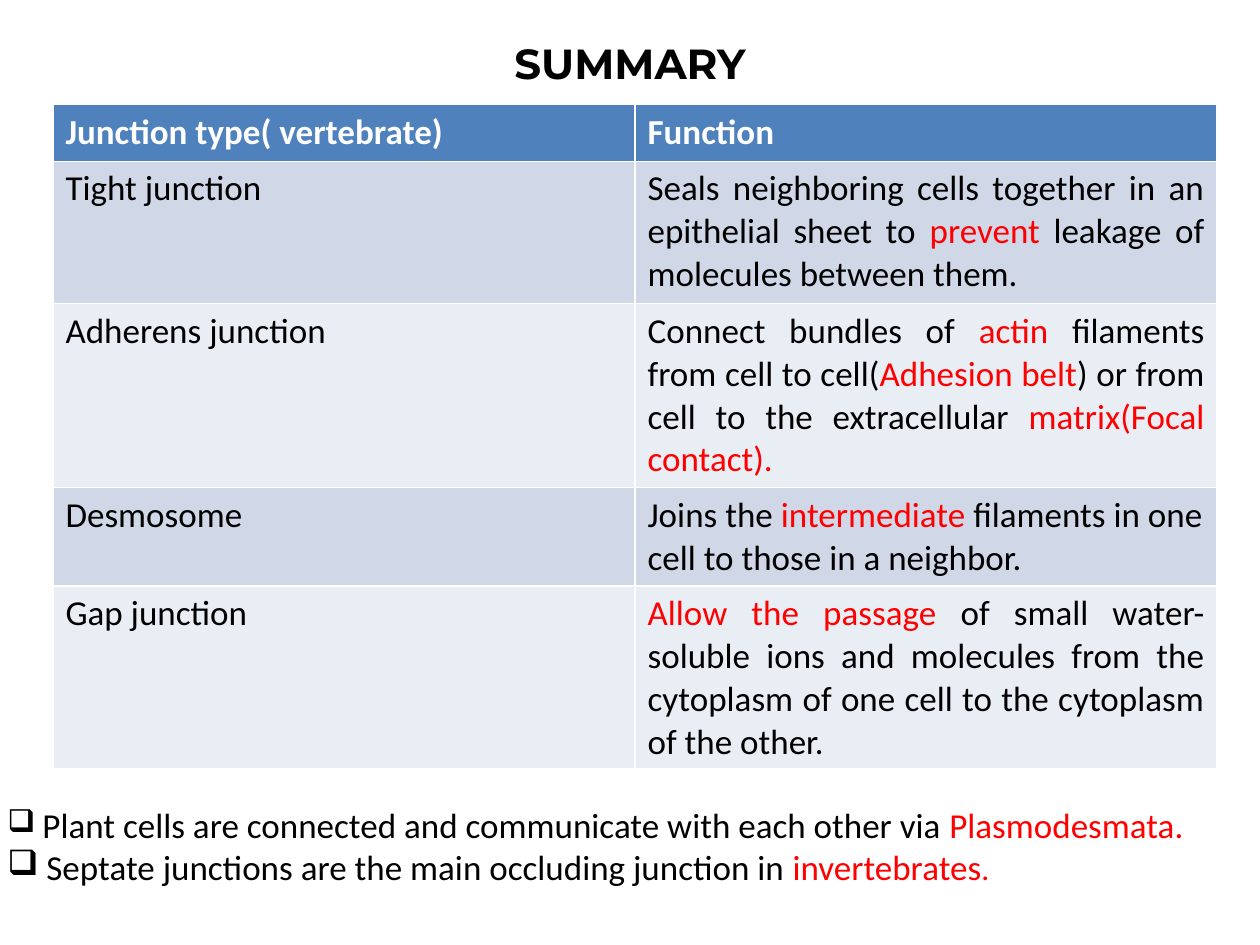
import pptx
import pptx.util
import pptx.dml.color
import pptx.enum.text
import lxml.etree
import pptx.oxml.ns

Inches, Pt = pptx.util.Inches, pptx.util.Pt
RGBColor = pptx.dml.color.RGBColor
PP_ALIGN = pptx.enum.text.PP_ALIGN

BLACK = RGBColor(0x00, 0x00, 0x00)
WHITE = RGBColor(0xFF, 0xFF, 0xFF)
RED = RGBColor(0xFF, 0x00, 0x00)
HEADER_BLUE = RGBColor(0x4F, 0x81, 0xBD)
BANDS = [RGBColor(0xD0, 0xD8, 0xE8), RGBColor(0xE9, 0xED, 0xF4)]

TITLE = "SUMMARY"
HEADER = ["Junction type( vertebrate)", "Function"]
JUNCTIONS = [
    ("Tight junction", 1.13, PP_ALIGN.JUSTIFY, [
        ("Seals neighboring cells together in an epithelial sheet to ", BLACK),
        ("prevent", RED),
        (" leakage of molecules between them.", BLACK)]),
    ("Adherens junction", 1.46, PP_ALIGN.JUSTIFY, [
        ("Connect bundles of ", BLACK),
        ("actin ", RED),
        ("filaments from cell to cell(", BLACK),
        ("Adhesion belt", RED),
        (") or from cell to the extracellular ", BLACK),
        ("matrix(Focal contact).", RED)]),
    ("Desmosome", 0.78, PP_ALIGN.LEFT, [
        ("Joins the ", BLACK),
        ("intermediate", RED),
        (" filaments in one cell to those in a neighbor.", BLACK)]),
    ("Gap junction", 1.45, PP_ALIGN.JUSTIFY, [
        ("Allow the passage ", RED),
        ("of small water-soluble ions and molecules from the cytoplasm "
         "of one cell to the cytoplasm of the other.", BLACK)]),
]
NOTES = [
    [(" ", BLACK, 18),
     ("Plant cells are connected and communicate with each other via ", BLACK),
     ("Plasmodesmata.", RED)],
    [(" Septate junctions are the main occluding junction in ", BLACK),
     ("invertebrates", RED),
     (".", RED, 18)],
]
HEADER_HEIGHT = 0.45
COLUMN_WIDTH = 4.62


def add_run(paragraph, text, color, size=20, font="Calibri", bold=False):
    run = paragraph.add_run()
    run.text = text
    run.font.name = font
    run.font.size = Pt(size)
    run.font.bold = bold
    run.font.color.rgb = color


def fill_cell(cell, color):
    cell.fill.solid()
    cell.fill.fore_color.rgb = color


def add_bullet(paragraph, mark):
    properties = paragraph._p.get_or_add_pPr()
    bullet = lxml.etree.SubElement(properties, pptx.oxml.ns.qn("a:buChar"))
    bullet.set("char", mark)


def add_title(slide):
    title = slide.shapes.add_textbox(Inches(0.5), 0, Inches(9), Inches(1)).text_frame
    title.word_wrap = True
    title.vertical_anchor = pptx.enum.text.MSO_ANCHOR.MIDDLE
    title.paragraphs[0].alignment = PP_ALIGN.CENTER
    add_run(title.paragraphs[0], TITLE, BLACK, 24, "Montserrat", True)


def add_junction_table(slide):
    heights = [HEADER_HEIGHT] + [height for _, height, _, _ in JUNCTIONS]
    table = slide.shapes.add_table(
        len(heights), len(HEADER), Inches(0.42), Inches(0.83),
        Inches(COLUMN_WIDTH * len(HEADER)), Inches(sum(heights))).table
    for column in table.columns:
        column.width = Inches(COLUMN_WIDTH)
    for row, height in zip(table.rows, heights):
        row.height = Inches(height)
    for cell, label in zip(table.rows[0].cells, HEADER):
        fill_cell(cell, HEADER_BLUE)
        add_run(cell.text_frame.paragraphs[0], label, WHITE, bold=True)
    for index, (name, _, alignment, function) in enumerate(JUNCTIONS):
        cells = table.rows[index + 1].cells
        contents = [([(name, BLACK)], PP_ALIGN.LEFT), (function, alignment)]
        for cell, (runs, align) in zip(cells, contents):
            fill_cell(cell, BANDS[index % len(BANDS)])
            paragraph = cell.text_frame.paragraphs[0]
            paragraph.alignment = align
            for run in runs:
                add_run(paragraph, *run)


def add_notes(slide):
    notes = slide.shapes.add_textbox(
        Inches(-0.04), Inches(6.33), Inches(9.63), Inches(0.77)).text_frame
    notes.word_wrap = False
    notes.auto_size = pptx.enum.text.MSO_AUTO_SIZE.SHAPE_TO_FIT_TEXT
    for index, runs in enumerate(NOTES):
        paragraph = notes.add_paragraph() if index else notes.paragraphs[0]
        paragraph.alignment = PP_ALIGN.JUSTIFY
        add_bullet(paragraph, "❑")
        for run in runs:
            add_run(paragraph, *run)


def main():
    deck = pptx.Presentation()
    deck.slide_width, deck.slide_height = Inches(10), Inches(7.5)
    slide = deck.slides.add_slide(deck.slide_layouts[6])
    add_title(slide)
    add_junction_table(slide)
    add_notes(slide)
    deck.save("out.pptx")


if __name__ == "__main__":
    main()
